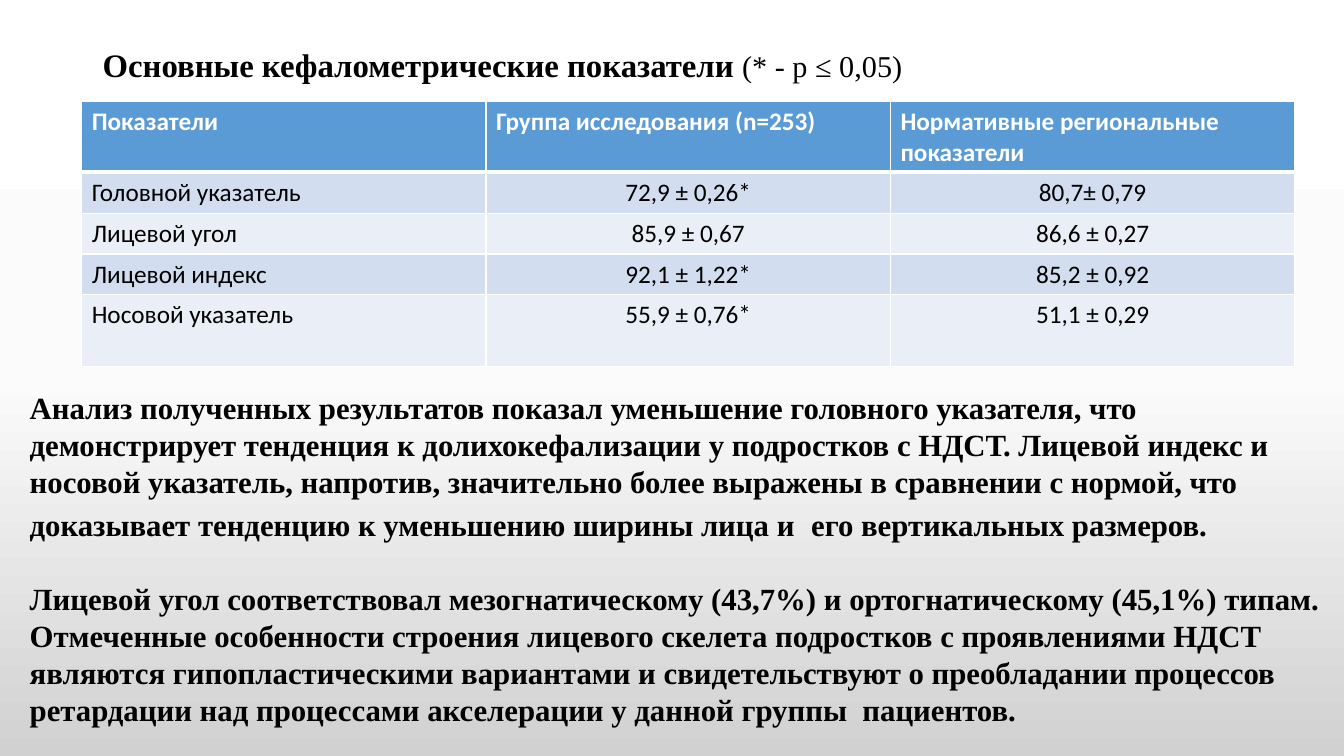
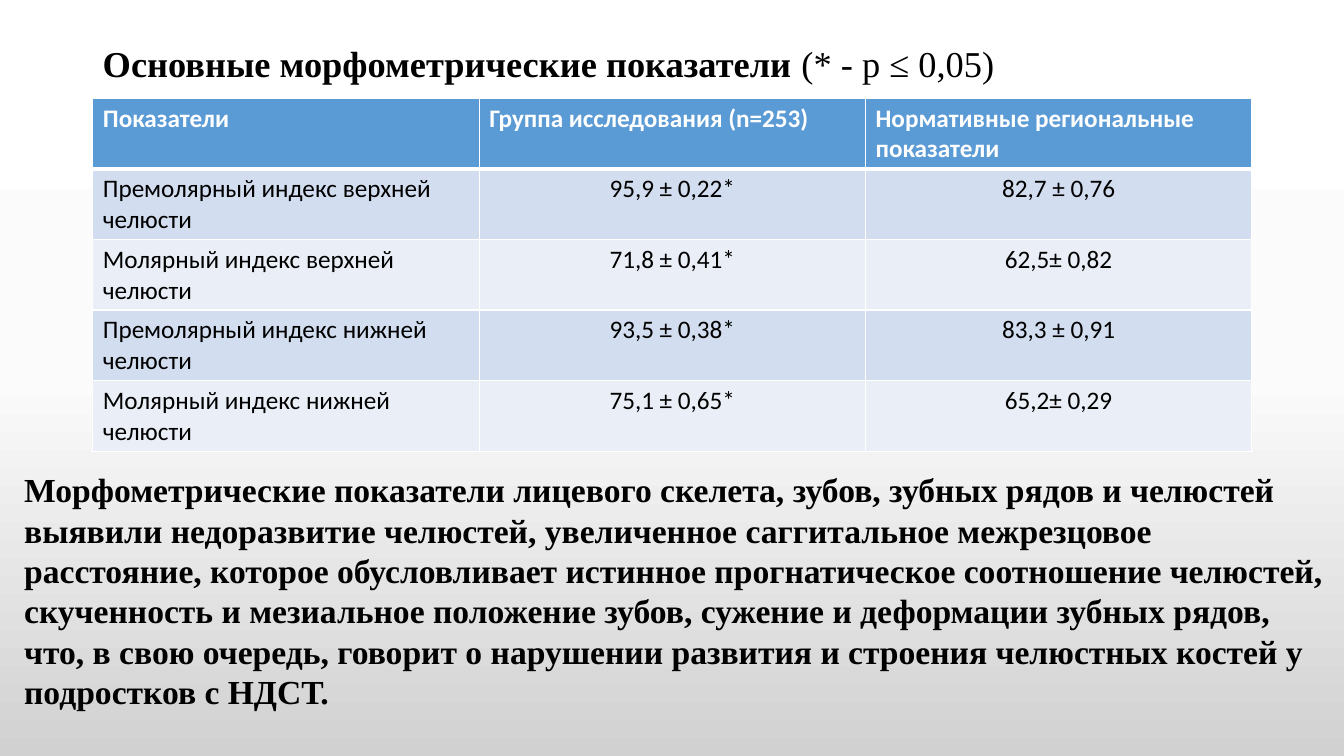
from dataclasses import dataclass

from lxml import etree
from pptx import Presentation
from pptx.dml.color import RGBColor
from pptx.enum import text
from pptx.oxml import ns
from pptx.util import Cm, Pt

# Shared colours and fonts
BLACK = RGBColor(0x00, 0x00, 0x00)
WHITE = RGBColor(0xFF, 0xFF, 0xFF)
HEADER = RGBColor(0x5B, 0x9B, 0xD5)
BANDS = (RGBColor(0xD2, 0xDE, 0xEF), RGBColor(0xEA, 0xEF, 0xF7))
BACKGROUND = (
    (0, WHITE),
    (50, RGBColor(0xFB, 0xFB, 0xFB)),
    (100, RGBColor(0xD1, 0xD1, 0xD1)),
)
SERIF = "Times New Roman"
SANS = "Calibri"

# Shared wording
HEADINGS = (
    "Показатели",
    "Группа исследования (n=253)",
    "Нормативные региональные показатели",
)
NOTE = "(* - р ≤ 0,05)"


@dataclass(frozen=True)
class Box:
    left: float
    top: float
    width: float
    height: float

    def lengths(self) -> tuple:
        return Cm(self.left), Cm(self.top), Cm(self.width), Cm(self.height)


@dataclass(frozen=True)
class Run:
    text: str
    size: float
    bold: bool = True


@dataclass(frozen=True)
class Para:
    runs: tuple[Run, ...]
    before: float = 0
    spacing: float = 1.0


@dataclass(frozen=True)
class Page:
    title: Para
    title_box: Box
    rows: tuple[tuple[str, str, str], ...]
    row_heights: tuple[float, ...]
    table_box: Box
    body: tuple[Para, ...]
    body_box: Box


PAGES = (
    Page(
        title=Para((Run("Основные кефалометрические показатели ", 23.4),
                    Run(NOTE, 21.6, False)), spacing=0.9),
        title_box=Box(2.34, 1.12, 29.21, 1.12),
        rows=(
            ("Головной указатель", "72,9 ± 0,26*", "80,7± 0,79"),
            ("Лицевой угол", "85,9 ± 0,67", "86,6 ± 0,27"),
            ("Лицевой индекс", "92,1 ± 1,22*", "85,2 ± 0,92"),
            ("Носовой указатель", "55,9 ± 0,76*", "51,1 ± 0,29"),
        ),
        row_heights=(1.78, 1.03, 1.03, 1.03, 1.8),
        table_box=Box(2.06, 2.56, 30.57, 6.67),
        body=(
            Para((
                Run("Анализ полученных результатов показал уменьшение головного "
                    "указателя, что демонстрирует тенденция к долихокефализации "
                    "у подростков с НДСТ. Лицевой индекс и носовой указатель, "
                    "напротив, значительно более выражены в сравнении с нормой, "
                    "что доказывает тенденцию к уменьшению ширины лица и ", 22),
                Run(" ", 26),
                Run("его вертикальных размеров.", 22),
            )),
            Para((Run("Лицевой угол соответствовал мезогнатическому (43,7%) и "
                      "ортогнатическому (45,1%) типам.", 22),), before=26),
            Para((Run("Отмеченные особенности строения лицевого скелета "
                      "подростков с проявлениями НДСТ являются "
                      "гипопластическими вариантами и свидетельствуют о "
                      "преобладании процессов ретардации над процессами "
                      "акселерации у данной группы  пациентов.", 22),)),
        ),
        body_box=Box(0.5, 9.68, 33.36, 8.89),
    ),
    Page(
        title=Para((Run("Основные морфометрические показатели ", 26),
                    Run(NOTE, 26, False)), spacing=0.9),
        title_box=Box(2.34, 1.02, 29.21, 1.27),
        rows=(
            ("Премолярный индекс верхней челюсти", "95,9 ± 0,22*", "82,7 ± 0,76"),
            ("Молярный индекс верхней челюсти", "71,8 ± 0,41*", "62,5± 0,82"),
            ("Премолярный индекс нижней челюсти", "93,5 ± 0,38*", "83,3 ± 0,91"),
            ("Молярный индекс нижней челюсти", "75,1 ± 0,65*", "65,2± 0,29"),
        ),
        row_heights=(1.78,) * 5,
        table_box=Box(2.34, 2.47, 29.21, 8.9),
        body=(
            Para((Run("Морфометрические показатели лицевого скелета, зубов, "
                      "зубных рядов и челюстей выявили недоразвитие челюстей, "
                      "увеличенное саггитальное межрезцовое расстояние, которое "
                      "обусловливает истинное прогнатическое соотношение "
                      "челюстей, скученность и мезиальное положение зубов, "
                      "сужение и деформации зубных рядов, что, в свою очередь, "
                      "говорит о нарушении развития и строения челюстных костей "
                      "у подростков с НДСТ.", 24),)),
        ),
        body_box=Box(0.36, 11.7, 33.3, 6.4),
    ),
)


def add_solid(parent, color: RGBColor) -> None:
    fill = etree.SubElement(parent, ns.qn("a:solidFill"))
    etree.SubElement(fill, ns.qn("a:srgbClr"), val=str(color))


def set_background(prs) -> None:
    """Put the three-stop gradient on the master, for every slide."""
    fill = prs.slide_master.background.fill
    fill.gradient()
    fill.gradient_angle = 270
    stops = prs.slide_master.element.find(".//" + ns.qn("a:gsLst"))
    for stop in list(stops):
        stops.remove(stop)
    for percent, color in BACKGROUND:
        stop = etree.SubElement(stops, ns.qn("a:gs"), pos=str(percent * 1000))
        etree.SubElement(stop, ns.qn("a:srgbClr"), val=str(color))


def add_run(p, content: str, color: RGBColor, **formats) -> None:
    r = p.add_run()
    r.text = content
    for name, value in formats.items():
        setattr(r.font, name, value)
    r.font.color.rgb = color


def add_text(slide, box: Box, paras: tuple[Para, ...],
             anchor=text.MSO_ANCHOR.TOP) -> None:
    tf = slide.shapes.add_textbox(*box.lengths()).text_frame
    tf.word_wrap = True
    tf.vertical_anchor = anchor
    for i, para in enumerate(paras):
        p = tf.add_paragraph() if i else tf.paragraphs[0]
        formats = {"space_before": Pt(para.before), "line_spacing": para.spacing}
        for name, value in formats.items():
            setattr(p, name, value)
        for run in para.runs:
            add_run(p, run.text, BLACK, name=SERIF, size=Pt(run.size),
                    bold=run.bold)


def set_borders(cell, top: float, bottom: float) -> None:
    props = cell._tc.get_or_add_tcPr()
    for side, width in (("L", 1), ("R", 1), ("T", top), ("B", bottom)):
        line = etree.SubElement(props, ns.qn(f"a:ln{side}"), w=str(Pt(width)))
        add_solid(line, WHITE)


def add_indicators(slide, page: Page) -> None:
    rows = (HEADINGS, *page.rows)
    table = slide.shapes.add_table(
        len(rows), len(HEADINGS), *page.table_box.lengths()).table
    for i, (values, height) in enumerate(zip(rows, page.row_heights)):
        table.rows[i].height = Cm(height)
        header = i == 0
        for j, value in enumerate(values):
            cell = table.cell(i, j)
            set_borders(cell, top=3 if i == 1 else 1, bottom=3 if header else 1)
            cell.fill.solid()
            cell.fill.fore_color.rgb = HEADER if header else BANDS[(i - 1) % 2]
            p = cell.text_frame.paragraphs[0]
            centred = j > 0 and not header
            p.alignment = text.PP_ALIGN.CENTER if centred else text.PP_ALIGN.LEFT
            add_run(p, value, WHITE if header else BLACK, name=SANS,
                    size=Pt(18), bold=header)


def main() -> None:
    prs = Presentation()
    prs.slide_width, prs.slide_height = Cm(33.87), Cm(19.05)
    set_background(prs)
    for page in PAGES:
        slide = prs.slides.add_slide(prs.slide_layouts[6])
        # Title, table, conclusions
        add_text(slide, page.title_box, (page.title,), text.MSO_ANCHOR.MIDDLE)
        add_indicators(slide, page)
        add_text(slide, page.body_box, page.body)
    prs.save("out.pptx")


if __name__ == "__main__":
    main()
